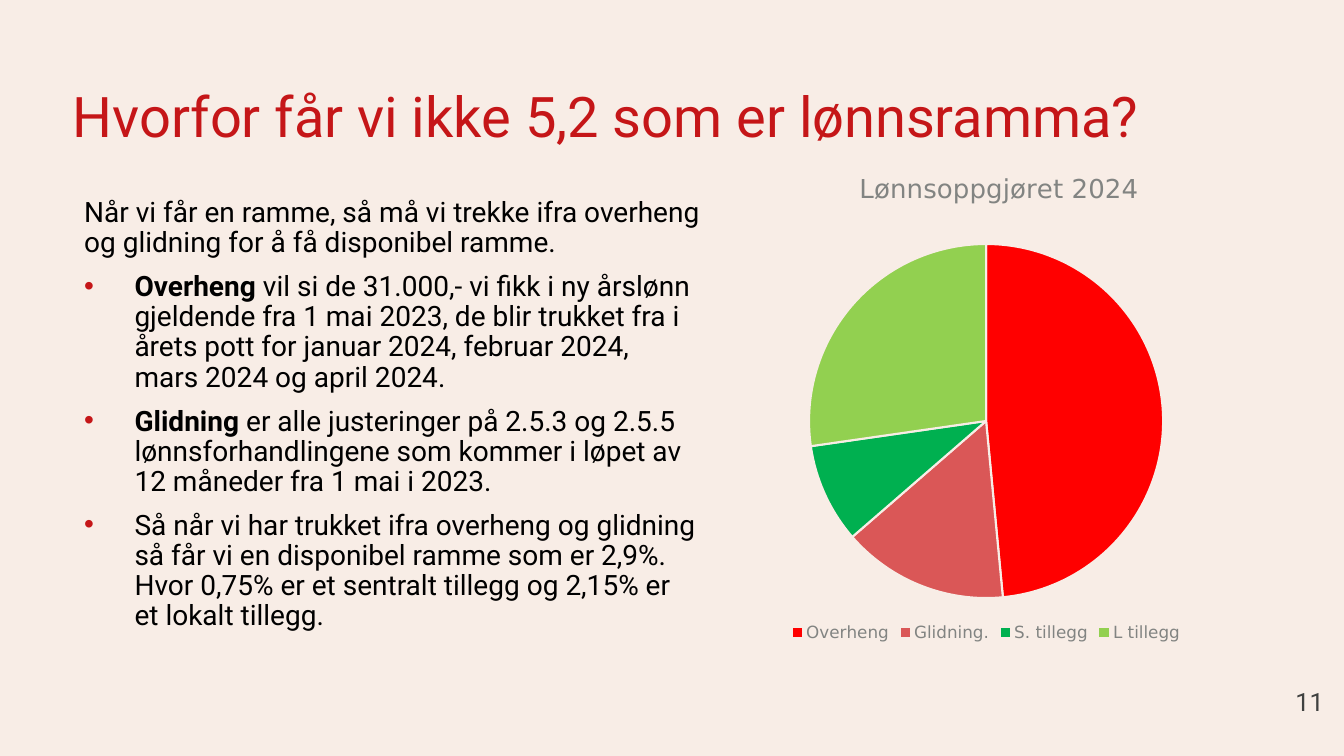
import pptx
import pptx.util
import pptx.chart.data
import pptx.dml.color
import pptx.enum.chart
import pptx.enum.shapes
import pptx.enum.text
import pptx.oxml
import pptx.oxml.ns

Pt = pptx.util.Pt
COLOURS = {"background": "F8EDE6", "red": "C51618", "body": "000000",
           "number": "404140", "chart text": "828482"}
SLICES = [("Overheng", 48, "FF0000"), ("Glidning.", 15, "DA5757"),
          ("S. tillegg", 9, "00B050"), ("L tillegg", 27, "92D050")]
PARAGRAPHS = [
    ("", "Når vi får en ramme, så må vi trekke ifra overheng og glidning "
         "for å få disponibel ramme."),
    ("Overheng ", "vil si de 31.000,- vi fikk i ny årslønn gjeldende fra 1 mai 2023, "
                  "de blir trukket fra i årets pott for januar 2024, februar 2024, "
                  "mars 2024 og april 2024."),
    ("Glidning", " er alle justeringer på 2.5.3 og 2.5.5 lønnsforhandlingene som "
                 "kommer i løpet av 12 måneder fra 1 mai i 2023."),
    ("", "Så når vi har trukket ifra overheng og glidning så får vi en disponibel "
         "ramme som er 2,9%. Hvor 0,75% er et sentralt tillegg og 2,15% er et "
         "lokalt tillegg."),
]


def style(font, size, colour, name="Roboto"):
    font.size = Pt(size)
    font.name = name
    font.color.rgb = pptx.dml.color.RGBColor.from_string(colour)


def manual_layout(element, **places):
    """Place a chart part by fractions of the chart area."""
    layout = element.find(pptx.oxml.ns.qn("c:layout"))
    if layout is None:
        layout = pptx.oxml.parse_xml(f"<c:layout {pptx.oxml.ns.nsdecls('c')}/>")
        text = element.find(pptx.oxml.ns.qn("c:tx"))
        if text is None:
            element.insert(0, layout)
        else:
            text.addnext(layout)
    modes = {"xMode": "edge", "yMode": "edge"}
    if "w" in places:
        modes = {"layoutTarget": "inner", **modes}
    items = "".join(f'<c:{key} val="{value}"/>' for key, value in {**modes, **places}.items())
    layout.append(pptx.oxml.parse_xml(
        f"<c:manualLayout {pptx.oxml.ns.nsdecls('c')}>{items}</c:manualLayout>"))


# Slide and background
deck = pptx.Presentation()
deck.slide_width, deck.slide_height = Pt(960), Pt(540)
page = deck.slides.add_slide(deck.slide_layouts[5])
page.background.fill.solid()
page.background.fill.fore_color.rgb = pptx.dml.color.RGBColor.from_string(COLOURS["background"])

# Title
title = page.shapes.title
title.left, title.top, title.width, title.height = Pt(52), Pt(60), Pt(842), Pt(54.5)
frame = title.text_frame
frame.text = "Hvorfor får vi ikke 5,2 som er lønnsramma?"
frame.margin_left = 0
frame.vertical_anchor = pptx.enum.text.MSO_ANCHOR.TOP
para = frame.paragraphs[0]
para.alignment = pptx.enum.text.PP_ALIGN.LEFT
para.line_spacing = 0.9
style(para.runs[0].font, 40, COLOURS["red"])

# Slide number
number = page.shapes.add_shape(pptx.enum.shapes.MSO_SHAPE.RECTANGLE,
                               Pt(894), Pt(486.5), Pt(66), Pt(29))
number.shadow.inherit = False
number.fill.solid()
number.fill.fore_color.rgb = pptx.dml.color.RGBColor.from_string(COLOURS["background"])
number.line.fill.background()
frame = number.text_frame
frame.text = "11"
frame.margin_right = Pt(14.4)
frame.vertical_anchor = pptx.enum.text.MSO_ANCHOR.MIDDLE
frame.paragraphs[0].alignment = pptx.enum.text.PP_ALIGN.RIGHT
style(frame.paragraphs[0].runs[0].font, 18, COLOURS["number"])

# Explanation: an introduction and three bullets
body = page.shapes.add_textbox(Pt(53), Pt(138), Pt(447), Pt(343))
frame = body.text_frame
frame.word_wrap = True
frame.margin_right = 0
for index, (lead, rest) in enumerate(PARAGRAPHS):
    para = frame.add_paragraph() if index else frame.paragraphs[0]
    para.line_spacing = Pt(21.5)
    para.space_before = Pt(10)
    for words, bold in ((lead, True), (rest, False)):
        if words:
            span = para.add_run()
            span.text = words
            span.font.bold = bold
            style(span.font, 20, COLOURS["body"])
    if index:
        properties = para._p.get_or_add_pPr()
        properties.set("marL", str(Pt(36)))
        properties.set("indent", str(Pt(-36)))
        names = pptx.oxml.ns.nsdecls("a")
        for bullet in (f'<a:buClr {names}><a:srgbClr val="{COLOURS["red"]}"/></a:buClr>',
                       f'<a:buFont {names} typeface="Arial"/>',
                       f'<a:buChar {names} char="•"/>'):
            properties.append(pptx.oxml.parse_xml(bullet))

# Pie chart
data = pptx.chart.data.CategoryChartData()
data.categories = [name for name, value, colour in SLICES]
data.add_series("Lønnsoppgjøret 2024", [value for name, value, colour in SLICES])
chart = page.shapes.add_chart(pptx.enum.chart.XL_CHART_TYPE.PIE,
                              Pt(500.4), Pt(119), Pt(408), Pt(343), data).chart
style(chart.font, 10, COLOURS["number"], "DejaVu Sans")
plot = chart.plots[0]
plot.vary_by_categories = True
for index, (name, value, colour) in enumerate(SLICES):
    point = plot.series[0].points[index].format
    point.fill.solid()
    point.fill.fore_color.rgb = pptx.dml.color.RGBColor.from_string(colour)
    point.line.width = Pt(1.5)
    point.line.color.rgb = pptx.dml.color.RGBColor.from_string(COLOURS["background"])

# Chart title and legend
chart.has_title = True
heading = chart.chart_title
heading.text_frame.text = "Lønnsoppgjøret 2024"
heading.include_in_layout = False
span = heading.text_frame.paragraphs[0].runs[0]
span.font.bold = False
style(span.font, 18.6, COLOURS["chart text"], "DejaVu Sans")
chart.has_legend = True
chart.legend.position = pptx.enum.chart.XL_LEGEND_POSITION.BOTTOM
chart.legend.include_in_layout = False
style(chart.legend.font, 12, COLOURS["chart text"], "DejaVu Sans")
manual_layout(heading._element, x=0.27, y=0)
manual_layout(chart._chartSpace.chart.plotArea, x=0.19, y=0.16, w=0.62, h=0.74)

deck.save("out.pptx")
